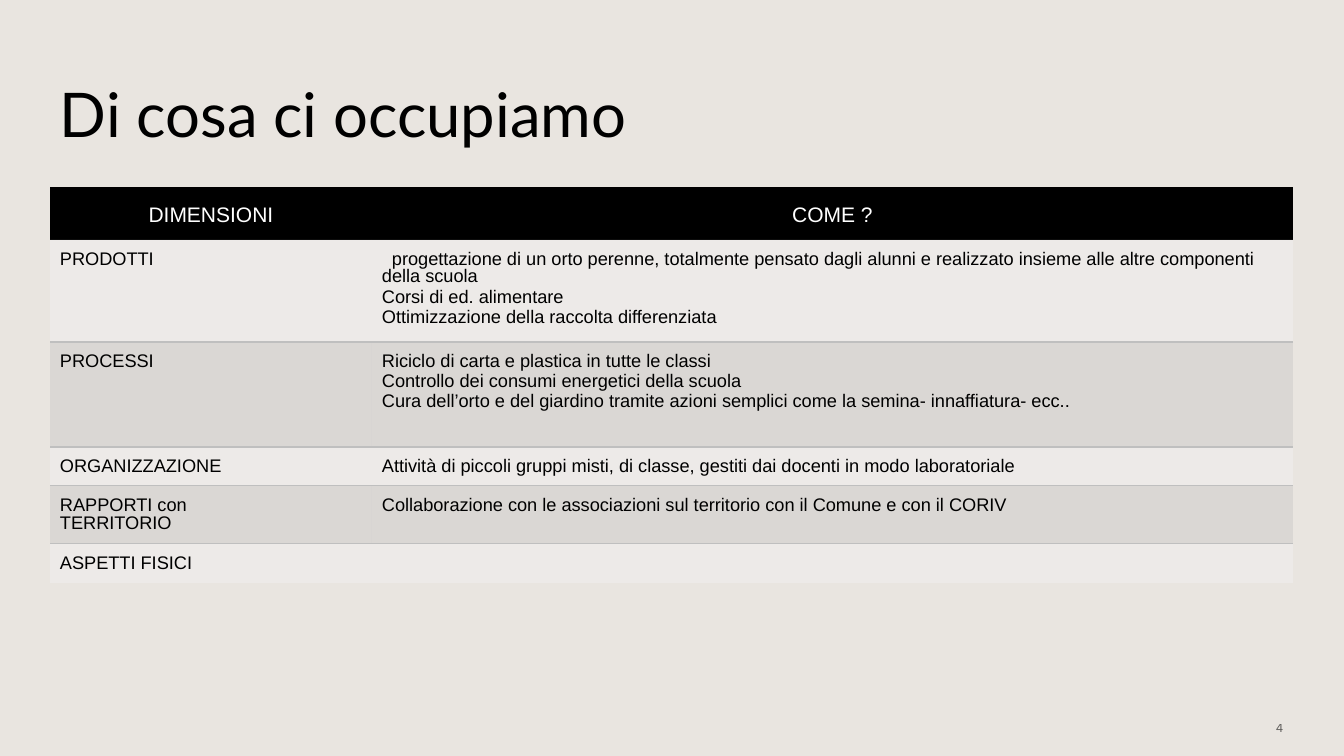
"""Build the slide "Di cosa ci occupiamo" with its table of dimensions."""
from lxml import etree
from pptx import Presentation, util as u
from pptx.dml.color import RGBColor
from pptx.enum import shapes, text
from pptx.oxml.ns import qn

PX = 914400 / 100.8


def px(*lengths):
    return [u.Emu(round(length * PX)) for length in lengths]


def paint(fill, colour, opacity=100):
    fill.solid()
    fill.fore_color.rgb = RGBColor.from_string(colour)
    if opacity < 100:
        solid = fill._xPr.find(qn("a:solidFill"))
        etree.SubElement(solid[0], qn("a:alpha"), val=str(opacity * 1000))


deck = Presentation()
deck.slide_width, deck.slide_height = px(1344, 756)
page = deck.slides.add_slide(deck.slide_layouts[6])

backdrop = page.shapes.add_shape(shapes.MSO_SHAPE.RECTANGLE, *px(0, 0, 1344, 756))
backdrop.shadow.inherit = False
backdrop.line.fill.background()
paint(backdrop.fill, "E0DAD4", 70)

labels = [
    ((50, 40, 1202, 146), "Di cosa ci occupiamo", "Lato", 44, 100, text.PP_ALIGN.LEFT),
    ((991, 708, 302, 40), "4", "Arial", 9, 60, text.PP_ALIGN.RIGHT),
]
for place, words, font, size, opacity, align in labels:
    box = page.shapes.add_textbox(*px(*place))
    box.text_frame.word_wrap = True
    box.text_frame.vertical_anchor = text.MSO_ANCHOR.MIDDLE
    para = box.text_frame.paragraphs[0]
    para.alignment = align
    span = para.add_run()
    span.text = words
    span.font.name, span.font.size = font, u.Pt(size)
    paint(span.font.fill, "000000", opacity)

rows = [
    (53, ["DIMENSIONI"], ["COME ?"]),
    (102, ["PRODOTTI"], [
        "progettazione di un orto perenne, totalmente pensato dagli alunni "
        "e realizzato insieme alle altre componenti della scuola",
        "Corsi di ed. alimentare",
        "Ottimizzazione della raccolta differenziata"]),
    (105, ["PROCESSI"], [
        "Riciclo di carta e plastica in tutte le classi",
        "Controllo dei consumi energetici della scuola",
        "Cura dell’orto e del giardino tramite azioni semplici come la semina- innaffiatura- ecc.."]),
    (39, ["ORGANIZZAZIONE"], [
        "Attività di piccoli gruppi misti, di classe, gestiti dai docenti in modo laboratoriale"]),
    (58, ["RAPPORTI con", "TERRITORIO"], [
        "Collaborazione con le associazioni sul territorio con il Comune e con il CORIV"]),
    (39, ["ASPETTI FISICI"], []),
]
height = sum(row[0] for row in rows)
table = page.shapes.add_table(len(rows), 2, *px(50, 187, 1243, height)).table
table.first_row = table.horz_banding = False
style = table._tbl.tblPr.find(qn("a:tableStyleId"))
style.text = "{2D5ABB26-0587-4C30-8999-92F81FD0307C}"
for column, width in zip(table.columns, px(322, 921)):
    column.width = width

for r, (row_height, *contents) in enumerate(rows):
    table.rows[r].height = px(row_height)[0]
    header = r == 0
    shade = ("000000", 100) if header else ("F2F2F2", 45) if r % 2 else ("BFBFBF", 35)
    size = 15 if header else 13
    for c, lines in enumerate(contents):
        cell = table.cell(r, c)
        cell.margin_left, cell.margin_top, cell.margin_right, cell.margin_bottom = px(10, 11, 10, 5)
        cell.vertical_anchor = text.MSO_ANCHOR.MIDDLE if header else text.MSO_ANCHOR.TOP
        paint(cell.fill, *shade)
        if 0 < r < 5:
            edge = etree.Element(qn("a:lnB" if r % 2 else "a:lnT"), w="12700")
            solid = etree.SubElement(edge, qn("a:solidFill"))
            etree.SubElement(solid, qn("a:srgbClr"), val="BFBFBF")
            cell._tc.get_or_add_tcPr().insert(0, edge)
        gap = u.Pt(1 if c and not header else 0.2)
        for i, line in enumerate(lines):
            para = cell.text_frame.paragraphs[0] if i == 0 else cell.text_frame.add_paragraph()
            para.alignment = text.PP_ALIGN.CENTER if header else text.PP_ALIGN.LEFT
            para.line_spacing = 0.87
            para.space_after = gap
            if i:
                para.space_before = gap
            if line.startswith("progettazione"):
                para._p.get_or_add_pPr().set("indent", str(px(10)[0]))
            span = para.add_run()
            span.text = line
            span.font.name, span.font.size = "Arial", u.Pt(size)
            paint(span.font.fill, "FFFFFF" if header else "000000")
        if not lines:
            etree.SubElement(cell.text_frame.paragraphs[0]._p, qn("a:endParaRPr"), sz="1300")

deck.save("out.pptx")
